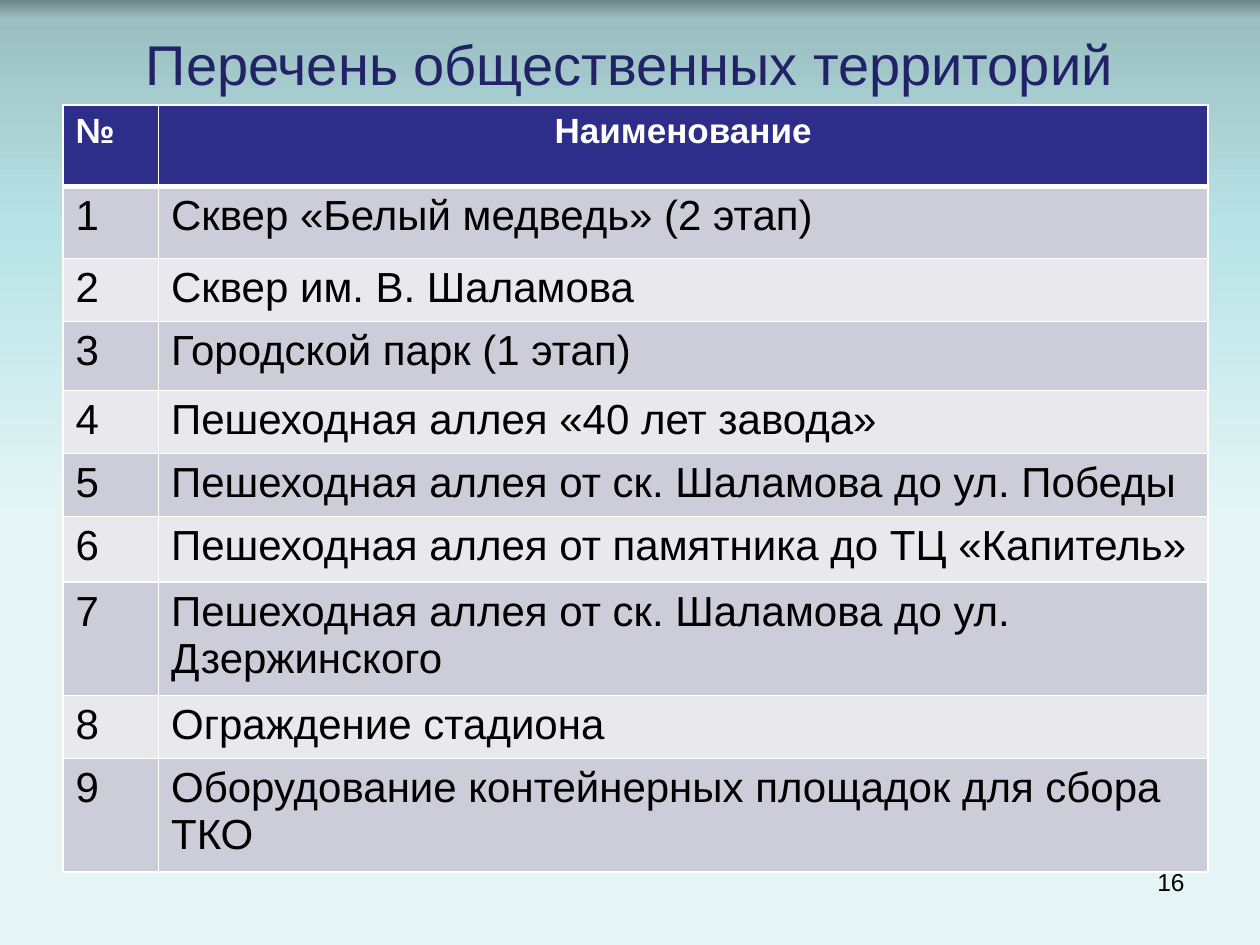
import dataclasses

import pptx
import pptx.dml.color
import pptx.enum.text
import pptx.oxml
import pptx.oxml.ns
import pptx.util
from lxml import etree

Pt = pptx.util.Pt
RGB = pptx.dml.color.RGBColor.from_string
ALIGN = pptx.enum.text.PP_ALIGN
ANCHOR = pptx.enum.text.MSO_ANCHOR
qn = pptx.oxml.ns.qn


@dataclasses.dataclass(frozen=True)
class Theme:
    font: str = "Arial"
    title: str = "222267"
    text: str = "000000"
    white: str = "FFFFFF"
    header: str = "2D2D8A"
    bands: tuple = ("CDCDDA", "E8E8ED")
    background: tuple = ((0, "6D8688"), (2, "9BBFC2"), (24, "B8E3E6"), (55, "E5F5F6"))
    title_size: int = 32
    header_size: int = 20
    body_size: int = 24
    number_size: int = 14
    border: int = 1
    header_border: int = 3


THEME = Theme()
HEADER = ("№", "Наименование")
TERRITORIES = (
    "Сквер «Белый медведь» (2 этап)",
    "Сквер им. В. Шаламова",
    "Городской парк (1 этап)",
    "Пешеходная аллея «40 лет завода»",
    "Пешеходная аллея от ск. Шаламова до ул. Победы",
    "Пешеходная аллея от памятника до ТЦ «Капитель»",
    "Пешеходная аллея от ск. Шаламова до ул. Дзержинского",
    "Ограждение стадиона",
    "Оборудование контейнерных площадок для сбора ТКО",
)
COLUMN_WIDTHS = (54.6, 599.6)
ROW_HEIGHTS = (46.6, 41, 35.2, 39.6, 35.2, 35.2, 37.4, 63.2, 35.2, 63.2)


def set_text(tf, text, size, color, align, bold=False):
    p = tf.paragraphs[0]
    p.text = text
    p.alignment = align
    p.font.name = THEME.font
    p.font.size = Pt(size)
    p.font.bold = bold
    p.font.color.rgb = RGB(color)


def add_text(s, box, text, size, color, align, anchor):
    tf = s.shapes.add_textbox(*map(Pt, box)).text_frame
    tf.word_wrap = True
    tf.vertical_anchor = anchor
    set_text(tf, text, size, color, align)


def set_background(s):
    """Fill the slide with the theme's top-to-bottom gradient."""
    fill = s.background.fill
    fill.gradient()
    fill.gradient_angle = 270  # counter-clockwise, so this runs downwards
    stops = fill.gradient_stops
    first = stops[0]
    first.position, first.color.rgb = 0, RGB(THEME.background[0][1])
    gs_list = s.background._cSld.find(".//" + qn("a:gsLst"))
    for gs in list(gs_list):
        gs_list.remove(gs)
    for position, color in THEME.background:
        gs = etree.SubElement(gs_list, qn("a:gs"), pos=str(position * 1000))
        etree.SubElement(gs, qn("a:srgbClr"), val=color)


def set_borders(cell, **widths):
    """Draw white borders; widths maps L, R, T, B to points."""
    tc_pr = cell._tc.get_or_add_tcPr()
    for i, side in enumerate("LRTB"):
        width = Pt(widths.get(side, THEME.border))
        ln = etree.Element(qn("a:ln" + side), w=str(width))
        fill = etree.SubElement(ln, qn("a:solidFill"))
        etree.SubElement(fill, qn("a:srgbClr"), val=THEME.white)
        tc_pr.insert(i, ln)


def style_cell(cell, text, row, col):
    cell.fill.solid()
    if row == 0:
        cell.fill.fore_color.rgb = RGB(THEME.header)
        align = ALIGN.CENTER if col else ALIGN.LEFT
        set_text(cell.text_frame, text, THEME.header_size, THEME.white, align, True)
        set_borders(cell, B=THEME.header_border)
    else:
        cell.fill.fore_color.rgb = RGB(THEME.bands[(row - 1) % 2])
        set_text(cell.text_frame, text, THEME.body_size, THEME.text, ALIGN.LEFT)
        set_borders(cell, T=THEME.header_border if row == 1 else THEME.border)


def add_territories(s, left, top):
    rows = [HEADER] + [(str(n), name) for n, name in enumerate(TERRITORIES, 1)]
    box = (left, top, sum(COLUMN_WIDTHS), sum(ROW_HEIGHTS))
    table = s.shapes.add_table(len(rows), len(HEADER), *map(Pt, box)).table
    for column, width in zip(table.columns, COLUMN_WIDTHS):
        column.width = Pt(width)
    for r, (values, height) in enumerate(zip(rows, ROW_HEIGHTS)):
        table.rows[r].height = Pt(height)
        for c, value in enumerate(values):
            style_cell(table.cell(r, c), value, r, c)


def main():
    prs = pptx.Presentation()
    prs.slide_width, prs.slide_height = Pt(720), Pt(540)
    s = prs.slides.add_slide(prs.slide_layouts[6])
    set_background(s)
    add_text(s, (36, 18, 648, 36), "Перечень общественных территорий",
             THEME.title_size, THEME.title, ALIGN.CENTER, ANCHOR.MIDDLE)
    add_territories(s, 36, 60)
    add_text(s, (516, 492, 168, 37.5), "16",
             THEME.number_size, THEME.text, ALIGN.RIGHT, ANCHOR.TOP)
    prs.save("out.pptx")


if __name__ == "__main__":
    main()
